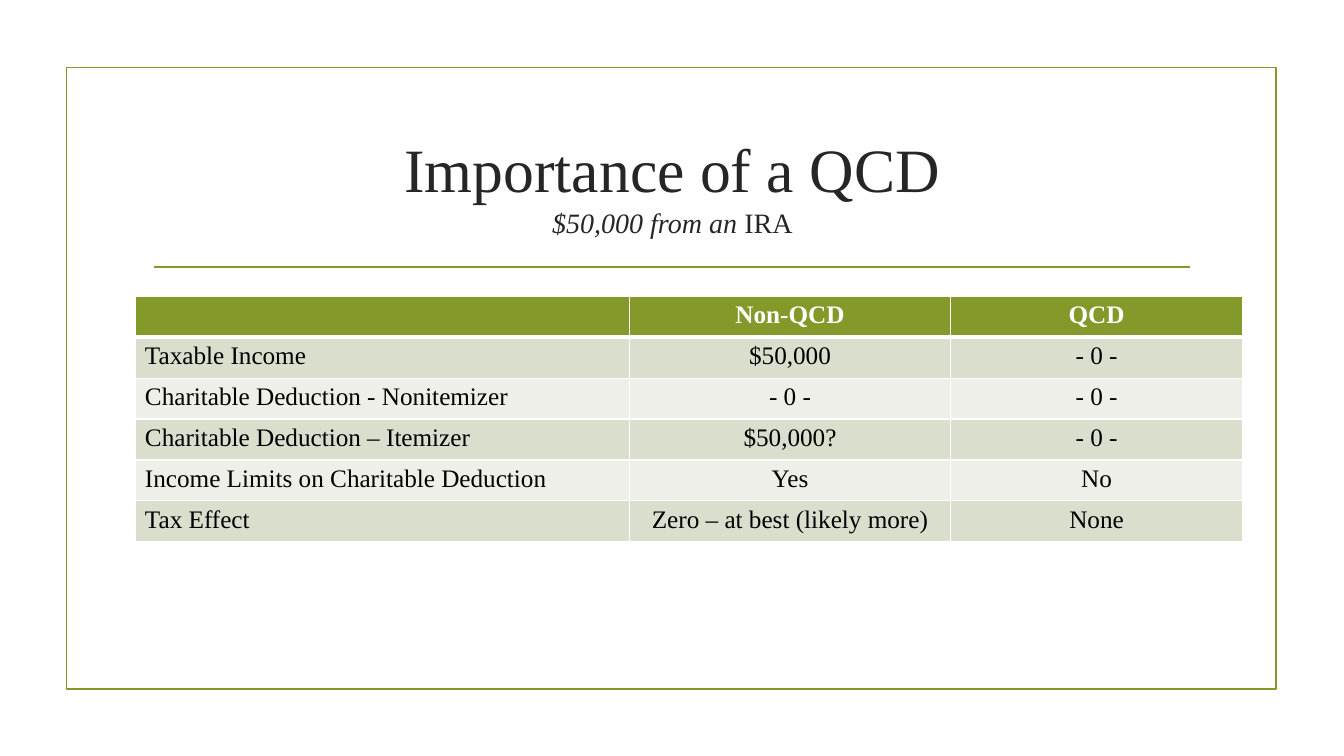
from dataclasses import dataclass

from lxml import etree
from pptx import Presentation
from pptx.dml.color import RGBColor
from pptx.enum import shapes, text
from pptx.oxml import ns
from pptx.util import Cm, Pt


@dataclass(frozen=True)
class Theme:
    font: str = "Times New Roman"
    green: str = "83992A"
    bands: tuple = ("D9DECD", "EDEFE8")
    title_color: str = "262626"
    body_color: str = "000000"
    white: str = "FFFFFF"
    title_size: int = 44
    subtitle_size: int = 20
    table_size: int = 18
    rule_width: float = 1.25
    border: int = 1
    header_border: int = 3


THEME = Theme()
COLUMN_WIDTHS = (12.47, 8.08, 7.37)
ROW_HEIGHT = 1.03
ROWS = (
    ("", "Non-QCD", "QCD"),
    ("Taxable Income", "$50,000", "- 0 -"),
    ("Charitable Deduction - Nonitemizer", "- 0 -", "- 0 -"),
    ("Charitable Deduction – Itemizer", "$50,000?", "- 0 -"),
    ("Income Limits on Charitable Deduction", "Yes", "No"),
    ("Tax Effect", "Zero – at best (likely more)", "None"),
)


def rgb(value):
    return RGBColor.from_string(value)


def add_run(p, words, color, **formats):
    r = p.add_run()
    r.text = words
    r.font.color.rgb = rgb(color)
    for name, value in {"name": THEME.font, **formats}.items():
        setattr(r.font, name, value)


def style_rule(line):
    line.color.rgb = rgb(THEME.green)
    line.width = Pt(THEME.rule_width)


def add_frame(s, left, top, width, height):
    sp = s.shapes.add_shape(shapes.MSO_SHAPE.RECTANGLE,
                            Cm(left), Cm(top), Cm(width), Cm(height))
    sp.shadow.inherit = False
    sp.fill.background()
    style_rule(sp.line)


def add_rule(s, left, right, y):
    rule = s.shapes.add_connector(shapes.MSO_CONNECTOR.STRAIGHT,
                                  Cm(left), Cm(y), Cm(right), Cm(y))
    style_rule(rule.line)
    etree.SubElement(rule._element.spPr, ns.qn("a:effectLst"))


def add_title(s, left, top, width, height):
    sp = s.shapes.add_textbox(Cm(left), Cm(top), Cm(width), Cm(height))
    tf = sp.text_frame
    formats = {"word_wrap": True, "margin_top": Cm(0.38),
               "vertical_anchor": text.MSO_ANCHOR.MIDDLE}
    for name, value in formats.items():
        setattr(tf, name, value)
    p = tf.paragraphs[0]
    p.alignment = text.PP_ALIGN.CENTER
    add_run(p, "Importance of a QCD", THEME.title_color, size=Pt(THEME.title_size))
    p.add_line_break()
    for words, italic in (("$50,000 from an ", True), ("IRA", False)):
        add_run(p, words, THEME.title_color,
                size=Pt(THEME.subtitle_size), italic=italic)


def set_borders(cell, widths):
    """Draw white cell borders; widths maps the sides L, R, T, B to points."""
    tc_pr = cell._tc.get_or_add_tcPr()
    for side, width in widths.items():
        line = etree.SubElement(tc_pr, ns.qn(f"a:ln{side}"), w=str(Pt(width)))
        fill = etree.SubElement(line, ns.qn("a:solidFill"))
        etree.SubElement(fill, ns.qn("a:srgbClr"), val=THEME.white)


def fill_cell(cell, words, row, col):
    header = row == 0
    widths = dict.fromkeys("LRTB", THEME.border)
    if row < 2:
        widths["B" if header else "T"] = THEME.header_border
    set_borders(cell, widths)
    cell.fill.solid()
    cell.fill.fore_color.rgb = rgb(THEME.green if header else THEME.bands[(row - 1) % 2])
    if words:
        p = cell.text_frame.paragraphs[0]
        p.alignment = text.PP_ALIGN.CENTER if col else text.PP_ALIGN.LEFT
        add_run(p, words, THEME.white if header else THEME.body_color,
                size=Pt(THEME.table_size), bold=header)


def add_comparison_table(s, left, top):
    table = s.shapes.add_table(len(ROWS), len(COLUMN_WIDTHS), Cm(left), Cm(top),
                               Cm(sum(COLUMN_WIDTHS)), Cm(ROW_HEIGHT * len(ROWS))).table
    for column, width in zip(table.columns, COLUMN_WIDTHS):
        column.width = Cm(width)
    for row, values in enumerate(ROWS):
        table.rows[row].height = Cm(ROW_HEIGHT)
        for col, words in enumerate(values):
            fill_cell(table.cell(row, col), words, row, col)


def main():
    prs = Presentation()
    prs.slide_width, prs.slide_height = Cm(33.87), Cm(19.05)
    s = prs.slides.add_slide(prs.slide_layouts[6])
    add_frame(s, 1.68, 1.7, 30.48, 15.67)
    add_rule(s, 3.89, 30, 6.73)
    add_title(s, 3.61, 2.72, 26.67, 3.63)
    add_comparison_table(s, 3.4, 7.47)
    prs.save("out.pptx")


if __name__ == "__main__":
    main()
